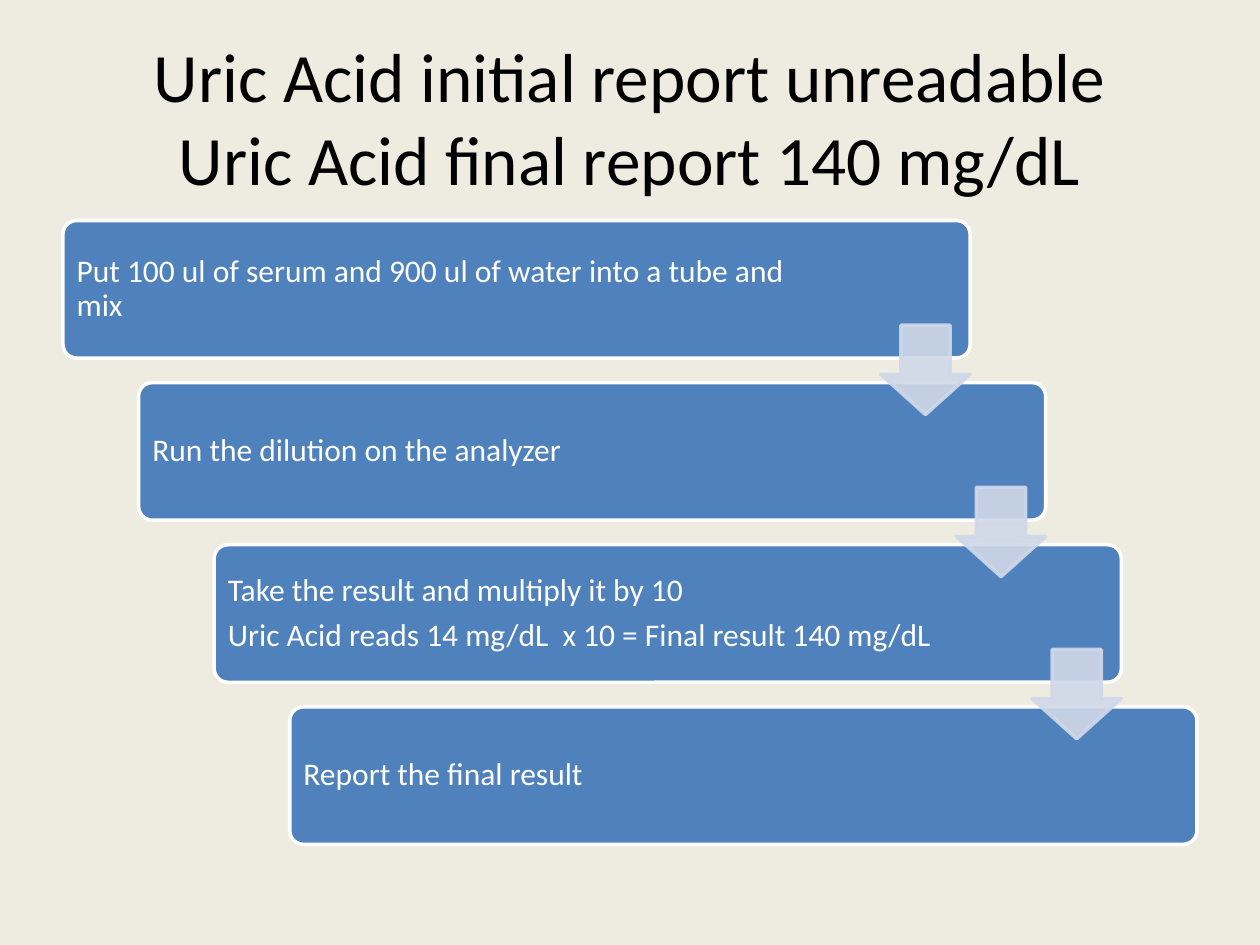
from lxml import etree
from pptx import Presentation
from pptx.dml.color import RGBColor
from pptx.enum import shapes, text
from pptx.oxml.ns import qn
from pptx.util import Pt

FONT = "Calibri"
DX, DY = 43.2, 92.64
LEFT, TOP = 36, 126
WIDE, HIGH = 518.4, 78.6
INSET = 2.4
ARROW = 51.1
STEPS = [
    ["Put 100 ul of serum and 900 ul of water into a tube and mix"],
    ["Run the dilution on the analyzer"],
    ["Take the result and multiply it by 10",
     "Uric Acid reads 14 mg/dL  x 10 = Final result 140 mg/dL"],
    ["Report the final result"],
]


def color(code):
    return RGBColor.from_string(code)


def fade(fill, percent):
    """Make a solid fill partly see-through."""
    for node in fill.iter(qn("a:srgbClr")):
        etree.SubElement(node, qn("a:alpha"), val=str(percent * 1000))


def add_form(slide, kind, box, fill, line, adjust):
    form = slide.shapes.add_shape(kind, *map(Pt, box))
    form.shadow.inherit = False
    form.fill.solid()
    form.fill.fore_color.rgb = color(fill)
    form.line.color.rgb = color(line)
    form.line.width = Pt(2)
    for i, value in enumerate(adjust):
        form.adjustments[i] = value
    return form


def add_text(slide, box, lines, size, ink, align, inset):
    frame = slide.shapes.add_textbox(*map(Pt, box)).text_frame
    frame.word_wrap = True
    frame.vertical_anchor = text.MSO_ANCHOR.MIDDLE
    frame.margin_left = frame.margin_right = Pt(inset)
    frame.margin_top = frame.margin_bottom = Pt(inset)
    frame.text = "\n".join(lines)
    for para in frame.paragraphs:
        para.alignment = align
        para.font.size = Pt(size)
        para.font.name = FONT
        para.font.color.rgb = color(ink)
    return frame


def add_step(slide, i, lines):
    x, y = LEFT + i * DX, TOP + i * DY
    add_form(slide, shapes.MSO_SHAPE.ROUNDED_RECTANGLE,
             (x, y, WIDE, HIGH), "4F81BD", "FFFFFF", [0.1])
    width = 420 if i else 427
    box = (x + INSET, y + INSET, width, HIGH - 2 * INSET)
    frame = add_text(slide, box, lines, 18, "FFFFFF", text.PP_ALIGN.LEFT, 5.4)
    for para in frame.paragraphs:
        para.line_spacing = 0.9
        para.space_after = Pt(6.3)


def add_arrow(slide, i):
    """Point from step i to the next, flush with the right edge of step i."""
    x = LEFT + i * DX + WIDE - ARROW
    y = TOP + i * DY + 59.8
    arrow = add_form(slide, shapes.MSO_SHAPE.DOWN_ARROW,
                     (x, y, ARROW, ARROW), "D0D8E8", "D0D8E8", [0.55, 0.45])
    fade(arrow.element.spPr, 90)


def main():
    deck = Presentation()
    deck.slide_width, deck.slide_height = Pt(720), Pt(540)
    slide = deck.slides.add_slide(deck.slide_layouts[6])
    slide.background.fill.solid()
    slide.background.fill.fore_color.rgb = color("EEECE1")
    title = "Uric Acid initial report unreadable\vUric Acid final report 140 mg/dL"
    add_text(slide, (36, 21.6, 648, 90), [title], 39.6, "000000",
             text.PP_ALIGN.CENTER, 3.6)
    for i, lines in enumerate(STEPS):
        add_step(slide, i, lines)
    for i in range(len(STEPS) - 1):
        add_arrow(slide, i)
    deck.save("out.pptx")


if __name__ == "__main__":
    main()
